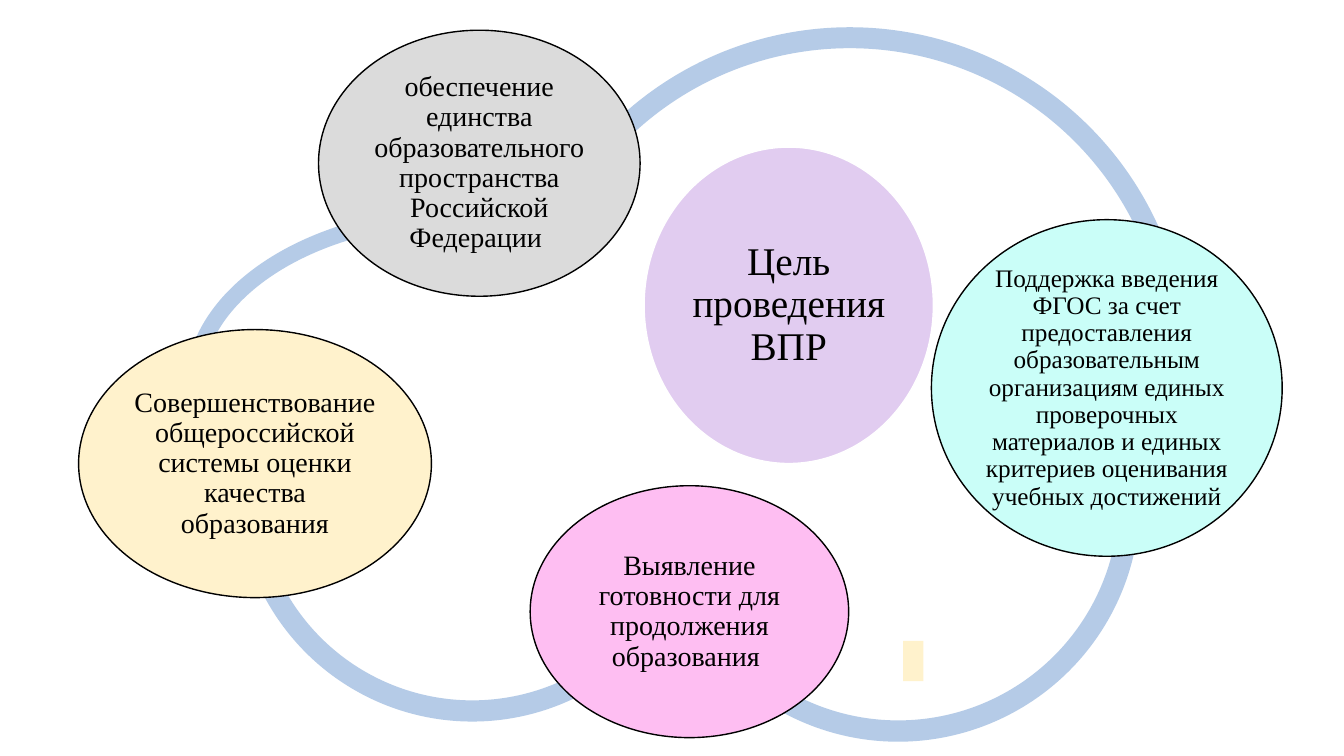
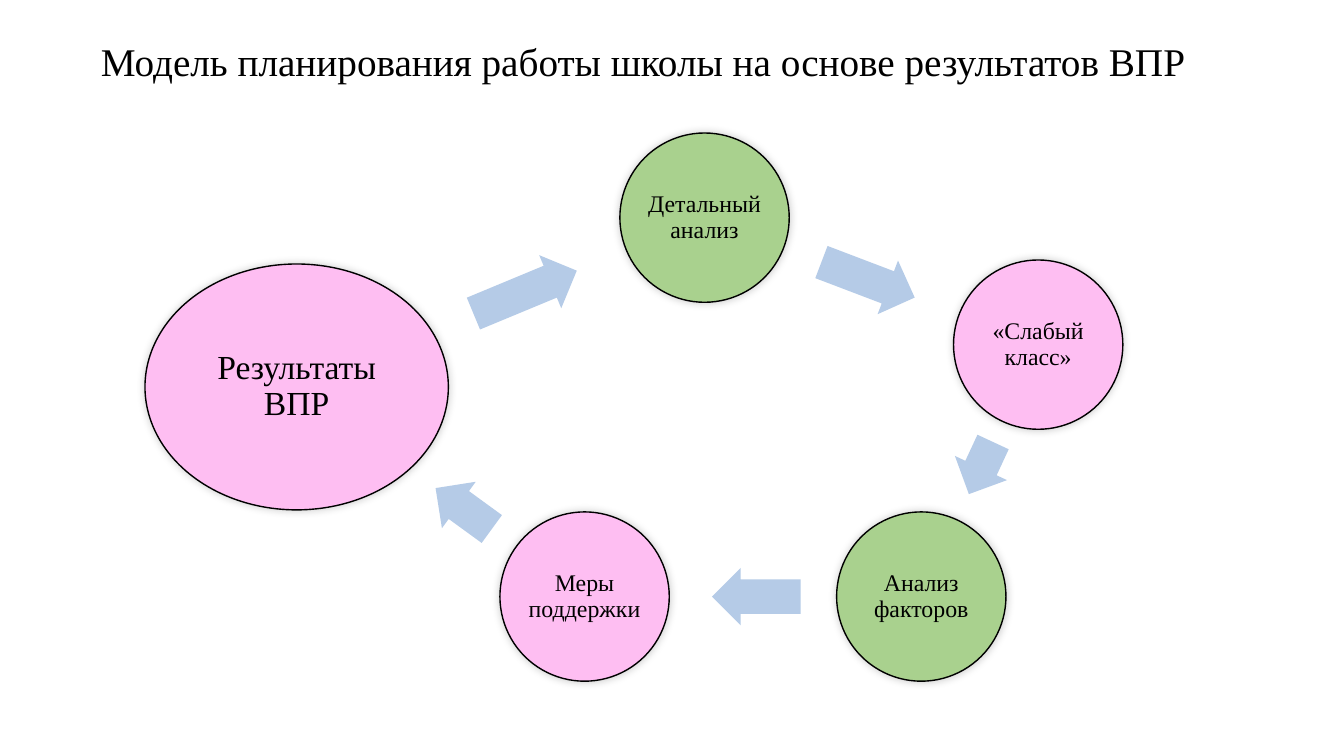
import math
from dataclasses import dataclass

from lxml import etree
from pptx import Presentation
from pptx import util as u
from pptx.dml.color import RGBColor
from pptx.enum import shapes, text
from pptx.oxml import ns


@dataclass(frozen=True)
class Theme:
    font: str = "Times New Roman"
    ink: str = "000000"
    white: str = "FFFFFF"
    blue: str = "B5CBE7"
    lilac: str = "E1CCF0"
    grey: str = "DBDBDB"
    aqua: str = "CAFEF8"
    pink: str = "FEBEF2"
    cream: str = "FFF2CC"
    green: str = "A9D18E"
    heading: int = 28
    result: int = 24
    goal: int = 20
    dense: int = 18
    step: int = 17


theme = Theme()
presentation = Presentation()
presentation.slide_width = u.Inches(13.33)
presentation.slide_height = u.Inches(7.5)
COLUMNS = 40
cell = presentation.slide_width / COLUMNS


def add_figure(slide, kind, box, fill, line=None):
    shape = slide.shapes.add_shape(kind, *(round(length * cell) for length in box))
    shape.shadow.inherit = False
    shape.fill.solid()
    shape.fill.fore_color.rgb = RGBColor.from_string(fill)
    if line:
        shape.line.color.rgb = RGBColor.from_string(line)
        shape.line.width = u.Pt(1)
    else:
        shape.line.fill.background()
    return shape


def write(shape, words, size, alignment, inset):
    frame = shape.text_frame
    frame.word_wrap = True
    frame.auto_size = text.MSO_AUTO_SIZE.NONE
    frame.vertical_anchor = text.MSO_ANCHOR.MIDDLE
    frame.margin_left = frame.margin_right = u.Inches(inset)
    frame.margin_top = frame.margin_bottom = u.Inches(inset)
    paragraph = frame.paragraphs[0]
    paragraph.alignment = alignment
    paragraph.line_spacing = 0.9
    run = paragraph.add_run()
    run.text = words
    run.font.name = theme.font
    run.font.size = u.Pt(size)
    run.font.color.rgb = RGBColor.from_string(theme.ink)


goals_slide = presentation.slides.add_slide(presentation.slide_layouts[6])
add_figure(goals_slide, shapes.MSO_SHAPE.RECTANGLE, (26.88, 19.08, 0.6, 1.2), theme.cream)

arcs = [
    ((5.52, 6.15, 16.65, 10.74), 159.91, 273.49, 0.046),
    ((7.05, 7.47, 14.01, 14.01), 18.76, 198.76, 0.045),
    ((19.53, 7.68, 14.4, 14.4), 331.82, 151.82, 0.044),
    ((15.21, 0.81, 20.16, 20.16), 199.78, 19.78, 0.031),
]
DEGREE = 0.6
for box, start, end, thickness in arcs:
    arc = add_figure(goals_slide, shapes.MSO_SHAPE.BLOCK_ARC, box, theme.blue)
    arc.adjustments[0] = start * DEGREE
    arc.adjustments[1] = end * DEGREE
    arc.adjustments[2] = thickness

goals = [
    ((19.17, 4.38, 8.61, 9.42), theme.lilac, theme.white, theme.heading,
     "Цель проведения ВПР"),
    ((9.48, 0.9, 9.57, 7.92), theme.grey, theme.ink, theme.goal,
     "обеспечение единства образовательного пространства Российской Федерации "),
    ((27.72, 6.54, 10.44, 10.02), theme.aqua, theme.ink, theme.dense,
     "Поддержка введения ФГОС за счет предоставления образовательным организациям "
     "единых проверочных материалов и единых критериев оценивания учебных достижений"),
    ((15.78, 14.46, 9.48, 7.5), theme.pink, theme.ink, theme.goal,
     "Выявление готовности для продолжения образования "),
    ((2.34, 9.81, 10.5, 7.98), theme.cream, theme.ink, theme.goal,
     "Совершенствование общероссийской системы оценки качества образования"),
]
for box, fill, line, size, words in goals:
    oval = add_figure(goals_slide, shapes.MSO_SHAPE.OVAL, box, fill, line)
    write(oval, words, size, text.PP_ALIGN.CENTER, 0.02)

cycle_slide = presentation.slides.add_slide(presentation.slide_layouts[5])
title = cycle_slide.shapes.title
title.left, title.top, title.width, title.height = (
    round(length * cell) for length in (2.7, 0.81, 34.5, 2.16)
)
write(title, "Модель планирования работы школы на основе результатов ВПР",
      theme.heading, text.PP_ALIGN.LEFT, 0.1)

circle = (5.04, 5.04)
steps = [
    ("Детальный анализ", (20.97, 6.48), circle, theme.green, theme.step, 2.97, 0.49),
    ("«Слабый класс»", (30.9, 10.26), circle, theme.pink, theme.step, 1.71, 0.49),
    ("Анализ факторов", (27.42, 17.76), circle, theme.green, theme.step, 2.64, 0.49),
    ("Меры поддержки", (17.4, 17.76), circle, theme.pink, theme.step, 2.07, 0.42),
    ("Результаты ВПР", (8.83, 11.52), (9.03, 7.32), theme.pink, theme.result, 3.33, 0.56),
]
ARROW_HEIGHT = 1.71
for index, (words, (x, y), (width, height), fill, size, length, share) in enumerate(steps):
    box = (x - width / 2, y - height / 2, width, height)
    oval = add_figure(cycle_slide, shapes.MSO_SHAPE.OVAL, box, fill, theme.ink)
    effects = oval.element.spPr.find(ns.qn("a:effectLst"))
    shadow = etree.SubElement(effects, ns.qn("a:outerShdw"), blurRad=str(u.Pt(6)),
                              dist="0", dir="18900000", rotWithShape="0")
    colour = etree.SubElement(shadow, ns.qn("a:srgbClr"), val=theme.ink)
    etree.SubElement(colour, ns.qn("a:alpha"), val="20000")
    write(oval, words, size, text.PP_ALIGN.CENTER, 0.02)

    next_x, next_y = steps[(index + 1) % len(steps)][1]
    across, down = next_x - x, next_y - y
    box = (x + share * across - length / 2, y + share * down - ARROW_HEIGHT / 2,
           length, ARROW_HEIGHT)
    arrow = add_figure(cycle_slide, shapes.MSO_SHAPE.RIGHT_ARROW, box, theme.blue)
    arrow.adjustments[0] = 0.6
    arrow.adjustments[1] = 0.5
    arrow.rotation = math.degrees(math.atan2(down, across)) % 360

presentation.save("out.pptx")
